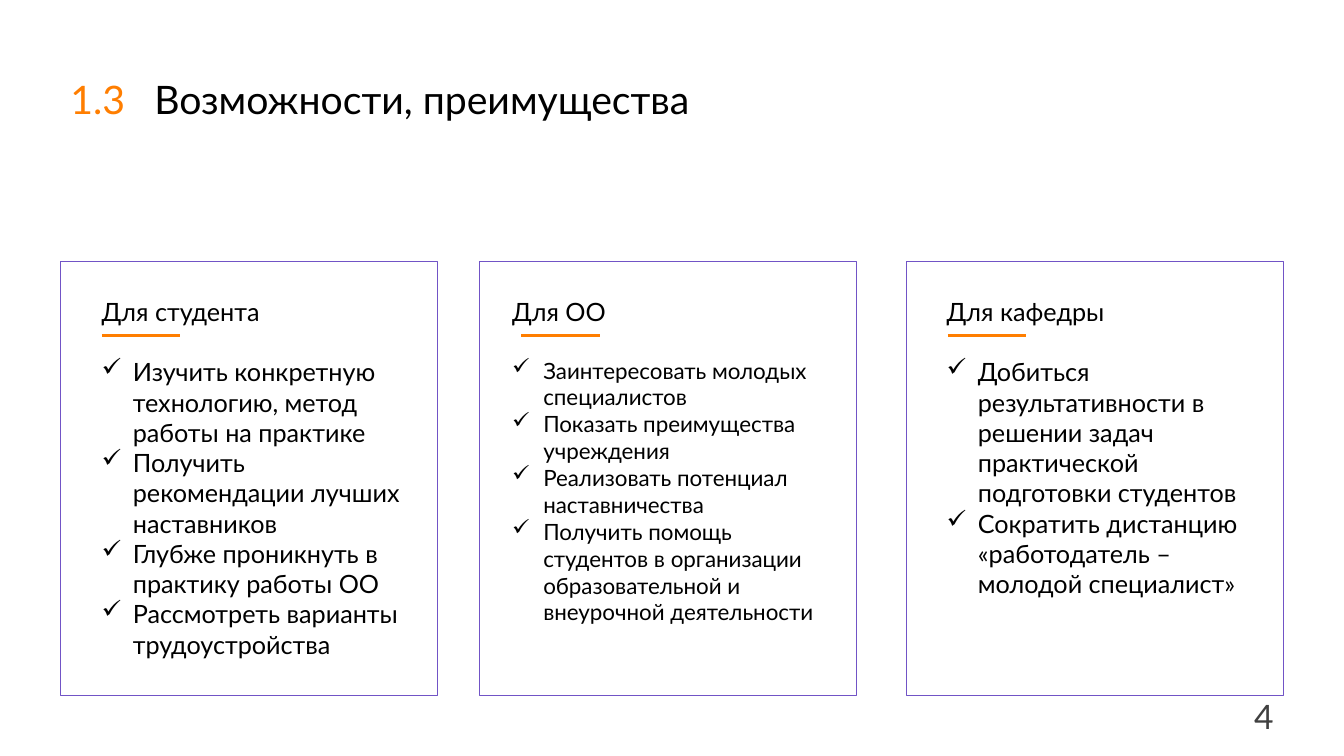
from lxml.etree import SubElement
from pptx import Presentation
from pptx.dml.color import RGBColor
from pptx.enum.shapes import MSO_CONNECTOR, MSO_SHAPE
from pptx.enum.text import MSO_ANCHOR, MSO_AUTO_SIZE, PP_ALIGN
from pptx.oxml.ns import qn
from pptx.util import Inches, Pt

BLACK = RGBColor(0x00, 0x00, 0x00)
ORANGE = RGBColor(0xFF, 0x7E, 0x00)
VIOLET = RGBColor(0x71, 0x54, 0xC6)
GRAY = RGBColor(0x40, 0x40, 0x40)

CARD_TOP, CARD_WIDTH, CARD_HEIGHT = 2.59, 3.74, 4.31
RULE_OFFSET, RULE_LENGTH, RULE_TOP = 0.41, 0.78, 3.33
HANGING = 0.31

cards = [
    (0.6, 0.91, 3.24, 4.34, "Для студента", 18, [
        "Изучить конкретную технологию, метод работы на практике",
        "Получить рекомендации лучших наставников",
        "Глубже проникнуть в практику работы ОО",
        "Рассмотреть варианты трудоустройства",
    ]),
    (4.76, 4.98, 3.29, 3.94, "Для ОО", 16, [
        "Заинтересовать молодых специалистов",
        "Показать преимущества учреждения",
        "Реализовать потенциал наставничества",
        "Получить помощь студентов в организации образовательной и внеурочной деятельности",
    ]),
    (8.99, 9.29, 3.28, 3.43, "Для кафедры", 18, [
        "Добиться результативности в решении задач практической подготовки студентов",
        "Сократить дистанцию «работодатель – молодой специалист»",
    ]),
]


def place_frame(shape, left, top, width, height, anchor):
    shape.left, shape.top = Inches(left), Inches(top)
    shape.width, shape.height = Inches(width), Inches(height)
    frame = shape.text_frame
    frame.word_wrap = True
    frame.auto_size = MSO_AUTO_SIZE.NONE
    frame.vertical_anchor = anchor
    return frame


def add_text(paragraph, text, size, color):
    run = paragraph.add_run()
    run.text = text
    run.font.name = "Lato"
    run.font.size = Pt(size)
    run.font.color.rgb = color


prs = Presentation()
prs.slide_width, prs.slide_height = Inches(13.33), Inches(7.5)
slide = prs.slides.add_slide(prs.slide_layouts[5])
shapes = slide.shapes

section_number = shapes.add_textbox(0, 0, 0, 0)
headings = [
    (shapes.title, 1.43, 6.24, "Возможности, преимущества", BLACK),
    (section_number, 0.6, 0.83, "1.3", ORANGE),
]
for heading, left, width, text, color in headings:
    frame = place_frame(heading, left, 0.8, width, 0.47, MSO_ANCHOR.BOTTOM)
    line = frame.paragraphs[0]
    line.alignment = PP_ALIGN.LEFT
    line.line_spacing = 0.9
    add_text(line, text, 28, color)

page_number = shapes.add_textbox(0, 0, 0, 0)
frame = place_frame(page_number, 11.32, 6.9, 1.41, 0.4, MSO_ANCHOR.MIDDLE)
frame.paragraphs[0].alignment = PP_ALIGN.RIGHT
add_text(frame.paragraphs[0], "4", 24, GRAY)

for card_left, text_left, text_width, text_height, audience, size, benefits in cards:
    card = shapes.add_shape(MSO_SHAPE.RECTANGLE, Inches(card_left), Inches(CARD_TOP),
                            Inches(CARD_WIDTH), Inches(CARD_HEIGHT))
    card.shadow.inherit = False
    card.fill.background()
    card.line.color.rgb = VIOLET
    card.line.width = Pt(0.75)

    rule_left = card_left + RULE_OFFSET
    rule = shapes.add_connector(MSO_CONNECTOR.STRAIGHT, Inches(rule_left), Inches(RULE_TOP),
                                Inches(rule_left + RULE_LENGTH), Inches(RULE_TOP))
    rule.line.color.rgb = ORANGE
    rule.line.width = Pt(2.25)
    SubElement(rule._element.spPr, qn("a:effectLst"))

    benefits_box = shapes.add_textbox(0, 0, 0, 0)
    frame = place_frame(benefits_box, text_left, 2.89, text_width, text_height, MSO_ANCHOR.TOP)
    add_text(frame.paragraphs[0], audience, 18, BLACK)
    for index, benefit in enumerate(benefits):
        item = frame.add_paragraph()
        if index == 0:
            item.space_before = Pt(21.6)
        properties = item._p.get_or_add_pPr()
        properties.set("marL", str(Inches(HANGING)))
        properties.set("indent", str(-Inches(HANGING)))
        SubElement(properties, qn("a:buChar"), char="✓")
        add_text(item, benefit, size, BLACK)

prs.save("out.pptx")
